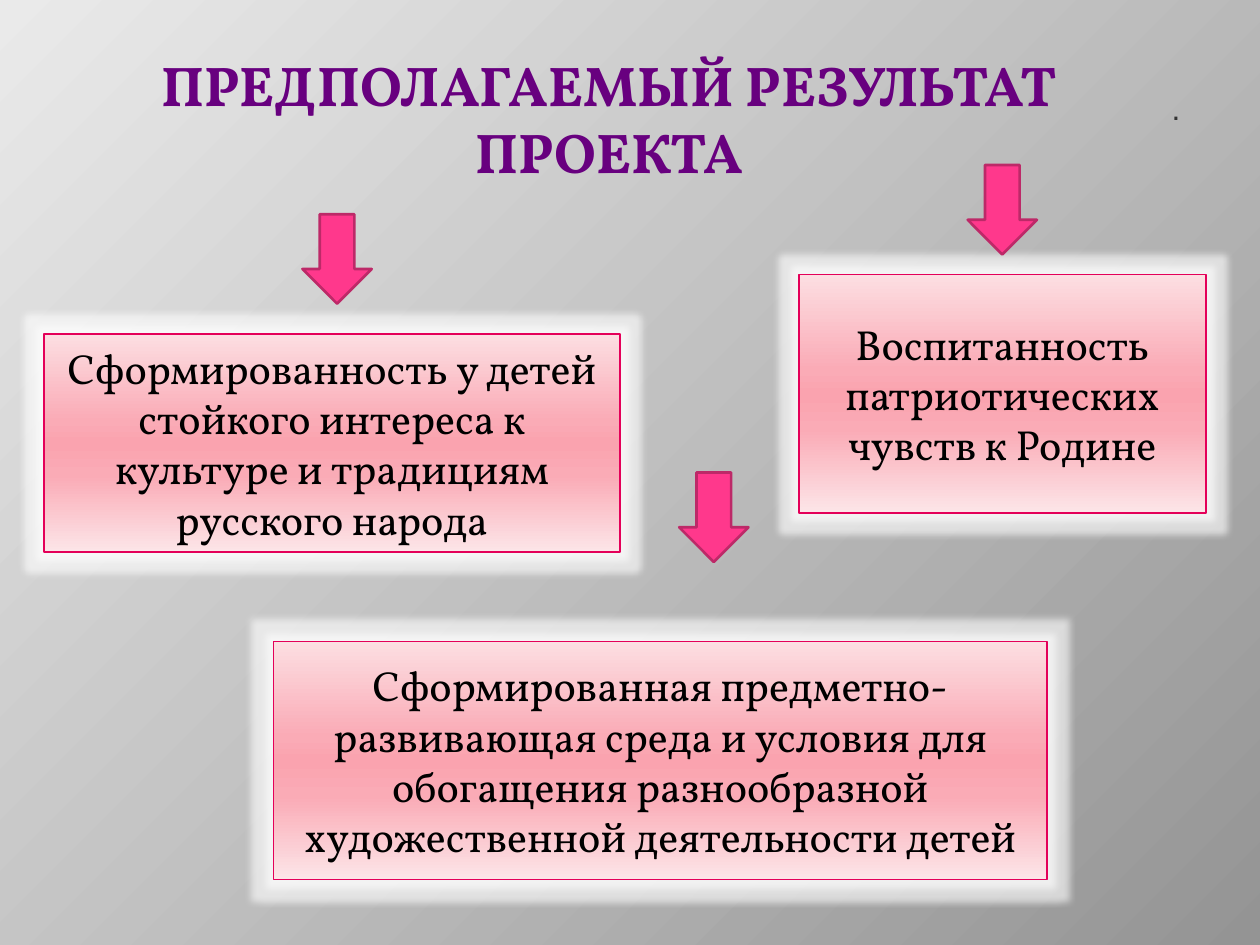
from lxml import etree
from pptx import Presentation
from pptx.dml.color import RGBColor
from pptx.enum.shapes import MSO_SHAPE
from pptx.enum.text import MSO_ANCHOR, PP_ALIGN
from pptx.oxml import parse_xml
from pptx.oxml.ns import nsdecls, qn
from pptx.util import Inches, Pt

PURPLE = RGBColor(0x68, 0x00, 0x7F)
BLACK = RGBColor(0x00, 0x00, 0x00)
DARK_GRAY = RGBColor(0x33, 0x33, 0x33)
LIGHT_BACK = RGBColor(0xEA, 0xEA, 0xEA)
DARK_BACK = RGBColor(0x94, 0x94, 0x94)
CRIMSON = RGBColor(0xE4, 0x00, 0x59)
PINK = RGBColor(0xFF, 0x38, 0x8C)
DARK_PINK = RGBColor(0xBD, 0x29, 0x68)
WHITE = RGBColor(0xFF, 0xFF, 0xFF)
CARD_STOPS = [
    (0, RGBColor(0xFC, 0xDE, 0xE2)),
    (40, RGBColor(0xFA, 0xAB, 0xB6)),
    (50, RGBColor(0xFA, 0xA3, 0xAF)),
    (65, RGBColor(0xFA, 0xAB, 0xB6)),
    (100, RGBColor(0xFC, 0xE5, 0xE8)),
]

RESULTS = [
    ("Сформированность у детей стойкого интереса к культуре и традициям русского народа",
     (0.35, 2.65, 4.57, 1.73)),
    ("Воспитанность патриотических чувств к Родине", (6.34, 2.18, 3.23, 1.89)),
    ("Сформированная предметно-развивающая среда и условия для обогащения "
     "разнообразной художественной деятельности детей", (2.17, 5.09, 6.14, 1.89)),
]
ARROWS = [(2.4, 1.7), (7.68, 1.31), (5.39, 3.75)]
ARROW_SIZE = (0.55, 0.71)


def style_text(tf, font, size, color, bold=False):
    for p in tf.paragraphs:
        for r in p.runs:
            r.font.name = font
            r.font.size = Pt(size)
            r.font.bold = bold
            r.font.color.rgb = color


def set_background(slide):
    fill = slide.background.fill
    fill.gradient()
    fill.gradient_angle = 315
    for stop, color, position in zip(fill.gradient_stops, (LIGHT_BACK, DARK_BACK), (0, 1)):
        stop.color.rgb = color
        stop.position = position


def fill_vertical(sp, stops):
    sp.fill.gradient()
    sp.fill.gradient_angle = 270
    gs_list = sp.fill._fill._gradFill.find(qn("a:gsLst"))
    for gs in list(gs_list):
        gs_list.remove(gs)
    for position, color in stops:
        gs_list.append(parse_xml(
            f'<a:gs {nsdecls("a")} pos="{position * 1000}"><a:srgbClr val="{color}"/></a:gs>'))


def add_glow(sp, color, radius, opacity):
    sp.shadow.inherit = False
    effects = sp._element.spPr.find(qn("a:effectLst"))
    glow = etree.SubElement(effects, qn("a:glow"), rad=str(radius))
    clr = etree.SubElement(glow, qn("a:srgbClr"), val=str(color))
    etree.SubElement(clr, qn("a:alpha"), val=str(opacity * 1000))


def add_text(slide, box, text, font, size, color, bold=False, wrap=True):
    tf = slide.shapes.add_textbox(*map(Inches, box)).text_frame
    tf.word_wrap = wrap
    tf.text = text
    style_text(tf, font, size, color, bold)
    return tf


def add_title(slide, box):
    tf = add_text(slide, box, "ПРЕДПОЛАГАЕМЫЙ РЕЗУЛЬТАТ\nПРОЕКТА",
                  "Vollkorn", 32, PURPLE, bold=True, wrap=False)
    tf.paragraphs[1].alignment = PP_ALIGN.CENTER


def add_result(slide, box, text):
    sp = slide.shapes.add_shape(MSO_SHAPE.RECTANGLE, *map(Inches, box))
    fill_vertical(sp, CARD_STOPS)
    sp.line.color.rgb = CRIMSON
    sp.line.width = Pt(0.94)
    add_glow(sp, WHITE, Inches(0.11), 60)
    tf = sp.text_frame
    tf.word_wrap = True
    tf.vertical_anchor = MSO_ANCHOR.MIDDLE
    tf.text = text
    tf.paragraphs[0].alignment = PP_ALIGN.CENTER
    style_text(tf, "Vollkorn", 24, BLACK)


def add_arrow(slide, box):
    sp = slide.shapes.add_shape(MSO_SHAPE.DOWN_ARROW, *map(Inches, box))
    sp.shadow.inherit = False
    sp.fill.solid()
    sp.fill.fore_color.rgb = PINK
    sp.line.color.rgb = DARK_PINK
    sp.line.width = Pt(1.5)


def main():
    prs = Presentation()
    prs.slide_width, prs.slide_height = Inches(10), Inches(7.5)
    slide = prs.slides.add_slide(prs.slide_layouts[6])
    set_background(slide)
    add_title(slide, (1.18, 0.35, 7.6, 1.18))
    for text, box in RESULTS:
        add_result(slide, box, text)
    add_text(slide, (9.2, 0.66, 0.6, 0.4), ".", "Arial", 18, DARK_GRAY)
    for corner in ARROWS:
        add_arrow(slide, corner + ARROW_SIZE)
    prs.save("out.pptx")


if __name__ == "__main__":
    main()
